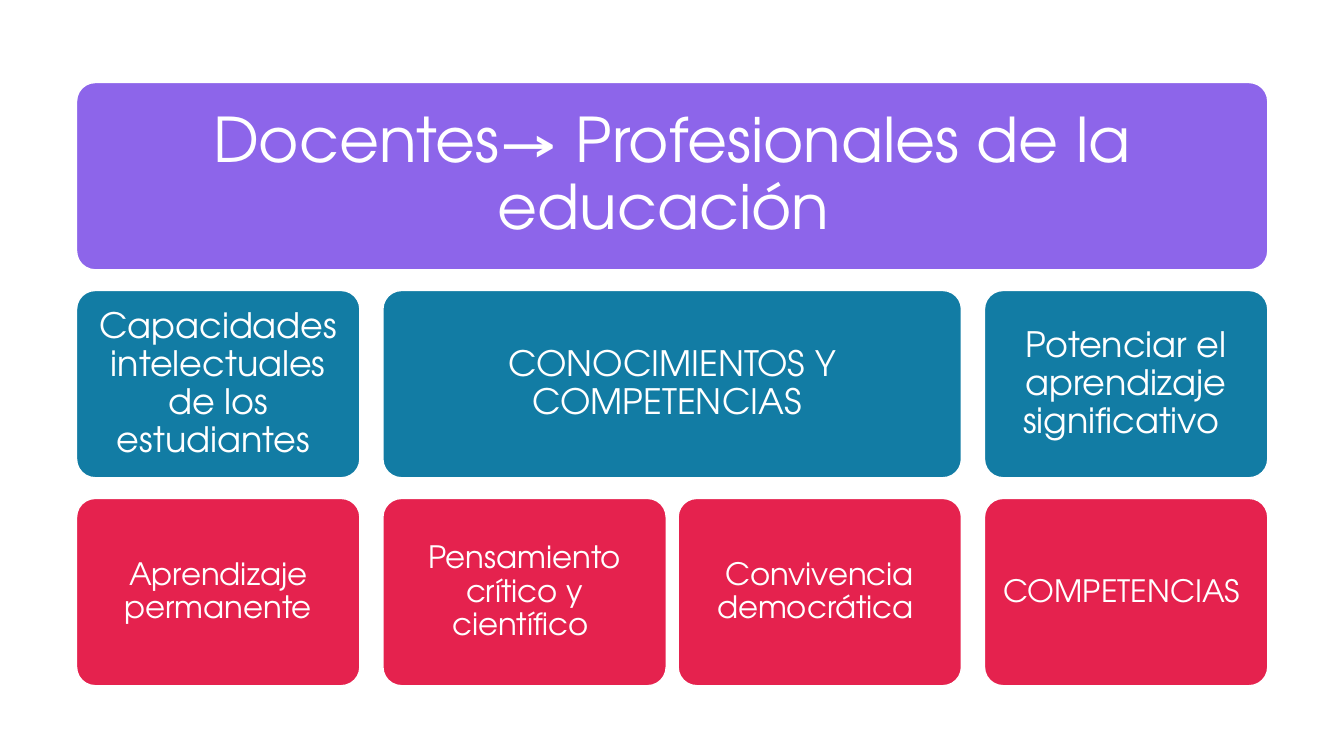
from pptx import Presentation
from pptx.dml.color import RGBColor
from pptx.enum.shapes import MSO_SHAPE
from pptx.enum.text import MSO_ANCHOR, PP_ALIGN
from pptx.util import Cm, Pt

ROUNDED = MSO_SHAPE.ROUNDED_RECTANGLE
MIDDLE = MSO_ANCHOR.MIDDLE
CENTER = PP_ALIGN.CENTER

WHITE = RGBColor(0xFF, 0xFF, 0xFF)
PURPLE = RGBColor(0x8D, 0x65, 0xEA)
TEAL = RGBColor(0x12, 0x7C, 0xA4)
RED = RGBColor(0xE5, 0x22, 0x4E)

# Grid in centimetres: the two middle columns stand closer together
LEFT, TOP = 1.93, 2.08
COLUMN_WIDTH, ROW_HEIGHT = 7.14, 4.72
ROW_STEP = 5.24
WIDE_GAP, NARROW_GAP = 0.58, 0.3
SECOND = LEFT + COLUMN_WIDTH + WIDE_GAP
THIRD = SECOND + COLUMN_WIDTH + NARROW_GAP
FOURTH = THIRD + COLUMN_WIDTH + WIDE_GAP
COLUMNS = (LEFT, SECOND, THIRD, FOURTH)

# Each row: colour, text size, blocks as (first column, last column, text)
ROWS = [
    (PURPLE, 44, [(0, 3, "Docentes→ Profesionales de la educación ")]),
    (TEAL, 25, [
        (0, 0, "Capacidades intelectuales de los estudiantes "),
        (1, 2, "CONOCIMIENTOS Y COMPETENCIAS "),
        (3, 3, "Potenciar el aprendizaje significativo "),
    ]),
    (RED, 22, [
        (0, 0, "Aprendizaje permanente"),
        (1, 1, "Pensamiento crítico y científico "),
        (2, 2, "Convivencia democrática "),
        (3, 3, "COMPETENCIAS "),
    ]),
]


class HierarchySlide:
    font_name = "TeX Gyre Adventor"
    text_color = WHITE
    corner = 0.1
    inset_ratio = 0.3  # text margin relative to the text size

    def __init__(self, slide):
        self.slide = slide

    def block(self, left, top, width, color, size, text):
        shape = self.slide.shapes.add_shape(
            ROUNDED, Cm(left), Cm(top), Cm(width), Cm(ROW_HEIGHT))
        shape.adjustments[0] = self.corner
        shape.shadow.inherit = False
        shape.fill.solid()
        shape.fill.fore_color.rgb = color
        shape.line.color.rgb = WHITE
        shape.line.width = Pt(1)

        frame = shape.text_frame
        frame.word_wrap = True
        frame.vertical_anchor = MIDDLE
        inset = Pt(self.inset_ratio * size)
        frame.margin_left = frame.margin_right = inset
        frame.margin_top = frame.margin_bottom = inset

        paragraph = frame.paragraphs[0]
        paragraph.text = text
        paragraph.alignment = CENTER
        paragraph.line_spacing = 0.9
        paragraph.font.name = self.font_name
        paragraph.font.size = Pt(size)
        paragraph.font.color.rgb = self.text_color

    def row(self, index, color, size, blocks):
        top = TOP + index * ROW_STEP
        for first, last, text in blocks:
            left = COLUMNS[first]
            width = COLUMNS[last] + COLUMN_WIDTH - left
            self.block(left, top, width, color, size, text)


def main():
    presentation = Presentation()
    presentation.slide_width = Cm(33.87)
    presentation.slide_height = Cm(19.05)
    slide = presentation.slides.add_slide(presentation.slide_layouts[6])

    # Hierarchy from top to bottom
    hierarchy = HierarchySlide(slide)
    for index, (color, size, blocks) in enumerate(ROWS):
        hierarchy.row(index, color, size, blocks)

    presentation.save("out.pptx")


if __name__ == "__main__":
    main()
